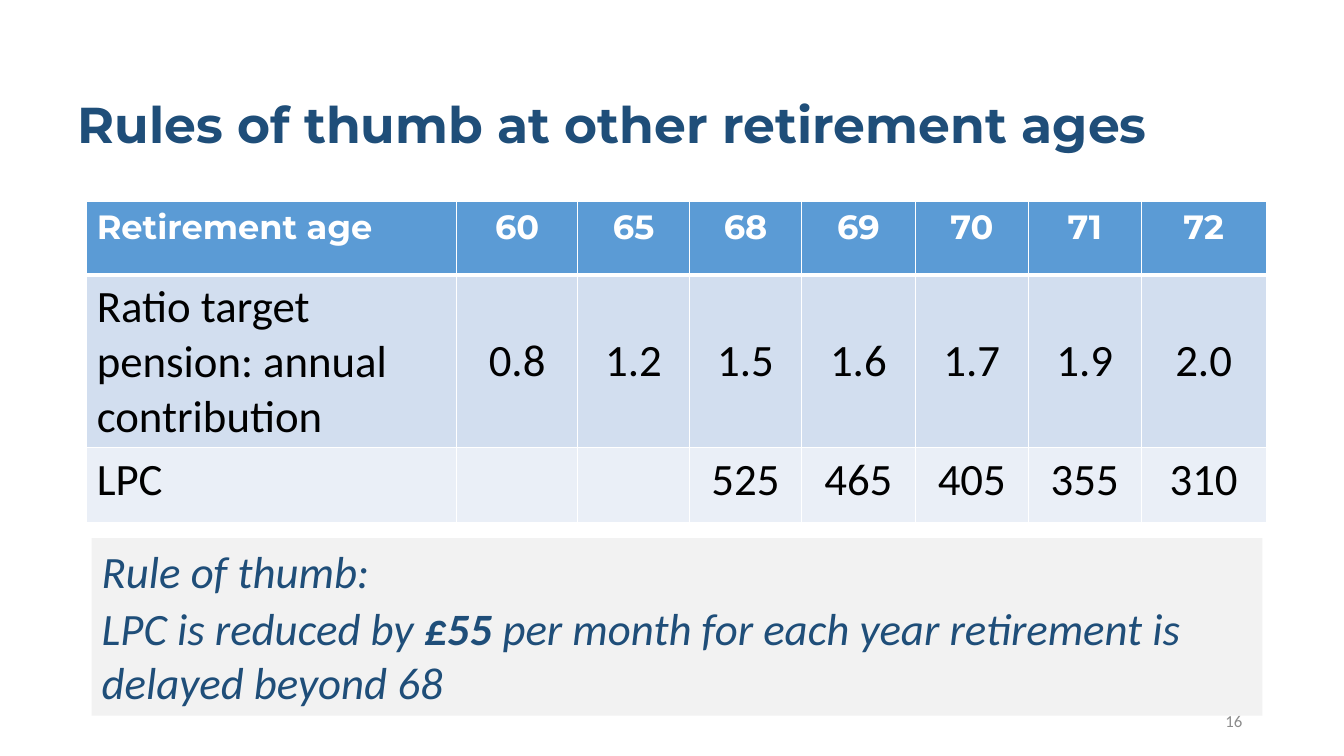
from dataclasses import dataclass

from lxml.etree import SubElement
from pptx import Presentation
from pptx.dml.color import RGBColor
from pptx.enum.shapes import MSO_SHAPE
from pptx.enum.text import MSO_ANCHOR, MSO_AUTO_SIZE, PP_ALIGN
from pptx.oxml.ns import qn
from pptx.util import Inches, Pt


@dataclass(frozen=True)
class Theme:
    heading_font: str = "Montserrat"
    body_font: str = "Calibri"
    navy: str = "1F4E79"
    white: str = "FFFFFF"
    black: str = "000000"
    grey: str = "8C8C8C"
    panel: str = "F2F2F2"
    header_fill: str = "5B9BD5"
    band_fills: tuple = ("D2DEEF", "EAEFF7")
    title_size: int = 36
    header_size: int = 24
    body_size: int = 32
    number_size: int = 12
    thin_rule: int = 1
    header_rule: int = 3


class SlideBuilder:
    def __init__(self, deck, theme):
        self.theme = theme
        self.slide = deck.slides.add_slide(deck.slide_layouts[5])

    def style(self, paragraph, size, color, face, align=PP_ALIGN.LEFT, bold=None, italic=None):
        paragraph.alignment = align
        font = paragraph.font
        font.name, font.size = face, Pt(size)
        font.bold, font.italic = bold, italic
        font.color.rgb = RGBColor.from_string(color)

    def title(self, text, box):
        heading = self.slide.shapes.title
        heading.left, heading.top, heading.width, heading.height = map(Inches, box)
        frame = heading.text_frame
        frame.text = text
        frame.vertical_anchor = MSO_ANCHOR.MIDDLE
        line = frame.paragraphs[0]
        line.line_spacing = 0.9
        self.style(line, self.theme.title_size, self.theme.navy, self.theme.heading_font, bold=True)

    def page_number(self, text, box):
        frame = self.slide.shapes.add_textbox(*map(Inches, box)).text_frame
        frame.word_wrap = True
        frame.vertical_anchor = MSO_ANCHOR.MIDDLE
        frame.text = text
        self.style(frame.paragraphs[0], self.theme.number_size, self.theme.grey,
                   self.theme.body_font, PP_ALIGN.RIGHT)

    def cell_borders(self, cell, top, bottom):
        properties = cell._tc.get_or_add_tcPr()
        rules = {"L": self.theme.thin_rule, "R": self.theme.thin_rule, "T": top, "B": bottom}
        for side, width in rules.items():
            rule = SubElement(properties, qn(f"a:ln{side}"), w=str(Pt(width)))
            SubElement(SubElement(rule, qn("a:solidFill")), qn("a:srgbClr"), val=self.theme.white)

    def table(self, rows, left, top, widths, heights):
        theme = self.theme
        table = self.slide.shapes.add_table(
            len(rows), len(widths), Inches(left), Inches(top),
            Inches(sum(widths)), Inches(sum(heights))).table
        for column, width in zip(table.columns, widths):
            column.width = Inches(width)
        for r, values in enumerate(rows):
            table.rows[r].height = Inches(heights[r])
            header = r == 0
            fill = theme.header_fill if header else theme.band_fills[(r - 1) % 2]
            look = ((theme.header_size, theme.white, theme.heading_font) if header
                    else (theme.body_size, theme.black, theme.body_font))
            for c, value in enumerate(values):
                cell = table.cell(r, c)
                self.cell_borders(cell, theme.header_rule if r == 1 else theme.thin_rule,
                                  theme.header_rule if header else theme.thin_rule)
                cell.fill.solid()
                cell.fill.fore_color.rgb = RGBColor.from_string(fill)
                cell.vertical_anchor = MSO_ANCHOR.MIDDLE if r == 1 else MSO_ANCHOR.TOP
                cell.text = value
                self.style(cell.text_frame.paragraphs[0], *look,
                           align=PP_ALIGN.CENTER if c else PP_ALIGN.LEFT, bold=header)

    def callout(self, lines, box):
        panel = self.slide.shapes.add_shape(MSO_SHAPE.RECTANGLE, *map(Inches, box))
        panel.shadow.inherit = False
        panel.fill.solid()
        panel.fill.fore_color.rgb = RGBColor.from_string(self.theme.panel)
        panel.line.fill.background()
        frame = panel.text_frame
        frame.word_wrap = True
        frame.auto_size = MSO_AUTO_SIZE.SHAPE_TO_FIT_TEXT
        frame.vertical_anchor = MSO_ANCHOR.TOP
        for i, pieces in enumerate(lines):
            line = frame.add_paragraph() if i else frame.paragraphs[0]
            line.space_after = Pt(3)
            self.style(line, self.theme.body_size, self.theme.navy, self.theme.body_font, italic=True)
            for text, bold in pieces:
                run = line.add_run()
                run.text = text
                if bold:
                    run.font.bold = True


def main():
    deck = Presentation()
    deck.slide_width, deck.slide_height = Inches(13.33), Inches(7.5)
    builder = SlideBuilder(deck, Theme())
    builder.page_number("16", (9.42, 6.95, 3, 0.4))
    builder.title("Rules of thumb at other retirement ages", (0.67, 0.69, 11.5, 1.15))
    builder.table(
        [
            ["Retirement age", "60", "65", "68", "69", "70", "71", "72"],
            ["Ratio target pension: annual contribution",
             "0.8", "1.2", "1.5", "1.6", "1.7", "1.9", "2.0"],
            ["LPC", "", "", "525", "465", "405", "355", "310"],
        ],
        0.86, 2, [3.67, 1.2, 1.11, 1.11, 1.13, 1.12, 1.12, 1.24], [0.73, 1.71, 0.74])
    builder.callout(
        [
            [("Rule of thumb:", False)],
            [("LPC is reduced by ", False), ("£55 ", True),
             ("per month for each year retirement is delayed beyond 68", False)],
        ],
        (0.91, 5.34, 11.61, 1.76))
    deck.save("out.pptx")


if __name__ == "__main__":
    main()
